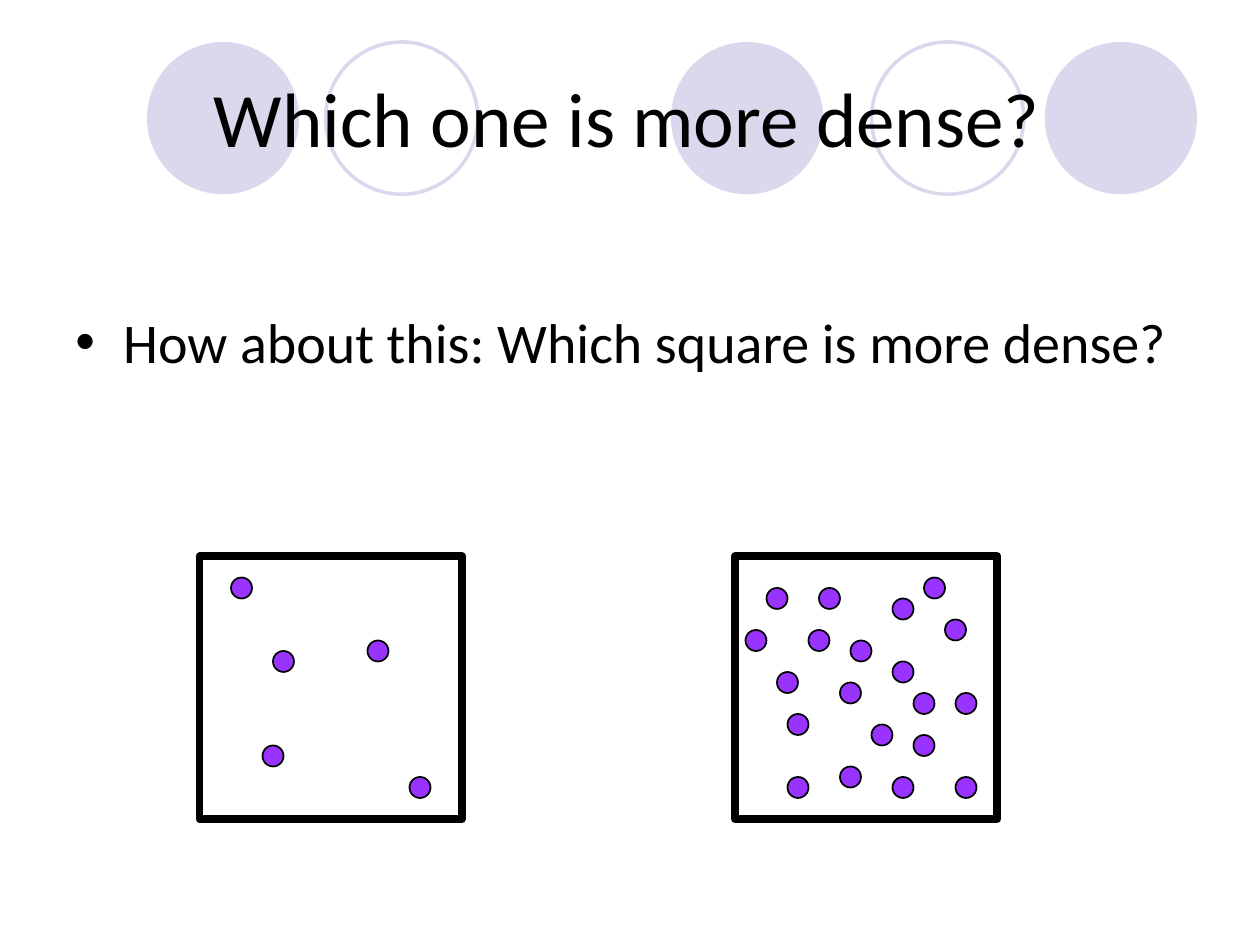
from dataclasses import dataclass
from typing import Optional

from lxml import etree
from pptx import Presentation
from pptx import util as u
from pptx.dml.color import RGBColor
from pptx.enum import shapes, text
from pptx.oxml import ns


@dataclass(frozen=True)
class Theme:
    font: str = "Calibri"
    title_size: int = 44
    body_size: int = 32
    ink: str = "000000"
    pale: str = "D9D8EC"
    particle: str = "9933FF"
    ring_line: float = 2
    square_line: float = 4.5
    particle_line: float = 1


@dataclass(frozen=True)
class Area:
    column: float
    row: float
    columns: float
    rows: float


@dataclass(frozen=True)
class Circle:
    column: float
    filled: bool


@dataclass(frozen=True)
class Square:
    column: int
    particles: tuple[tuple[int, int], ...]


THEME = Theme()
CELL = u.Inches(1) / 12
PAGE_COLUMNS, PAGE_ROWS = 120, 90
CIRCLE_ROW, CIRCLE_SIZE = 4, 14.5
SQUARE_ROW, SQUARE_SIZE = 53, 25
PARTICLE_SIZE = 2

CIRCLES = (
    Circle(63.9, True),
    Circle(99.5, True),
    Circle(14, True),
    Circle(83, False),
    Circle(31, False),
)
SQUARES = (
    Square(19, ((3, 2), (6, 18), (16, 8), (20, 21), (7, 9))),
    Square(70, (
        (3, 3), (8, 3), (4, 11), (15, 4), (10, 20), (10, 12), (15, 10),
        (20, 6), (13, 16), (21, 13), (5, 21), (21, 21), (1, 7), (7, 7),
        (15, 21), (11, 8), (5, 15), (17, 13), (17, 17), (18, 2),
    )),
)


def cells(count: float) -> int:
    return round(count * CELL)


def bounds(area: Area) -> tuple[int, ...]:
    return tuple(map(cells, (area.column, area.row, area.columns, area.rows)))


def draw_shape(page, kind, area: Area, fill: Optional[str] = None,
               line: Optional[str] = None, width: float = 1) -> None:
    shape = page.shapes.add_shape(kind, *bounds(area))
    shape.shadow.inherit = False
    if fill:
        shape.fill.solid()
        shape.fill.fore_color.rgb = RGBColor.from_string(fill)
    else:
        shape.fill.background()
    if line:
        shape.line.color.rgb = RGBColor.from_string(line)
        shape.line.width = u.Pt(width)
    else:
        shape.line.fill.background()


def draw_circle(page, circle: Circle) -> None:
    area = Area(circle.column, CIRCLE_ROW, CIRCLE_SIZE, CIRCLE_SIZE)
    fill, line = (THEME.pale, None) if circle.filled else (None, THEME.pale)
    draw_shape(page, shapes.MSO_SHAPE.OVAL, area, fill, line, THEME.ring_line)


def draw_square(page, square: Square) -> None:
    area = Area(square.column, SQUARE_ROW, SQUARE_SIZE, SQUARE_SIZE)
    draw_shape(page, shapes.MSO_SHAPE.RECTANGLE, area,
               line=THEME.ink, width=THEME.square_line)
    for column, row in square.particles:
        spot = Area(square.column + column, SQUARE_ROW + row,
                    PARTICLE_SIZE, PARTICLE_SIZE)
        draw_shape(page, shapes.MSO_SHAPE.OVAL, spot, THEME.particle,
                   THEME.ink, THEME.particle_line)


def draw_text(page, area: Area, words: str, size: int, anchor,
              top_inset: float = 0.05):
    box = page.shapes.add_textbox(*bounds(area))
    frame = box.text_frame
    frame.word_wrap = True
    frame.vertical_anchor = anchor
    frame.margin_left, frame.margin_right = u.Inches(0.1), u.Inches(0.14)
    frame.margin_top, frame.margin_bottom = u.Inches(top_inset), u.Inches(0.05)
    para = frame.paragraphs[0]
    para.text = words
    para.font.name = THEME.font
    para.font.size = u.Pt(size)
    para.font.color.rgb = RGBColor.from_string(THEME.ink)
    return para


def add_bullet(para, indent: float) -> None:
    properties = para._p.get_or_add_pPr()
    properties.set("marL", str(u.Inches(indent)))
    properties.set("indent", str(-u.Inches(indent)))
    bullet_font = etree.Element(ns.qn("a:buFont"), typeface="Arial")
    bullet = etree.Element(ns.qn("a:buChar"), char="•")
    properties.insert(0, bullet_font)
    properties.insert(1, bullet)


def main() -> None:
    deck = Presentation()
    deck.slide_width, deck.slide_height = cells(PAGE_COLUMNS), cells(PAGE_ROWS)
    page = deck.slides.add_slide(deck.slide_layouts[6])
    for circle in CIRCLES:
        draw_circle(page, circle)
    title = draw_text(page, Area(6, 3.6, 108, 15), "Which one is more dense?",
                      THEME.title_size, text.MSO_ANCHOR.MIDDLE)
    title.alignment = text.PP_ALIGN.CENTER
    question = draw_text(page, Area(6, 21, 108, 59.4),
                         "How about this: Which square is more dense?",
                         THEME.body_size, text.MSO_ANCHOR.TOP, top_inset=0.69)
    add_bullet(question, 0.38)
    for square in SQUARES:
        draw_square(page, square)
    deck.save("out.pptx")


if __name__ == "__main__":
    main()
